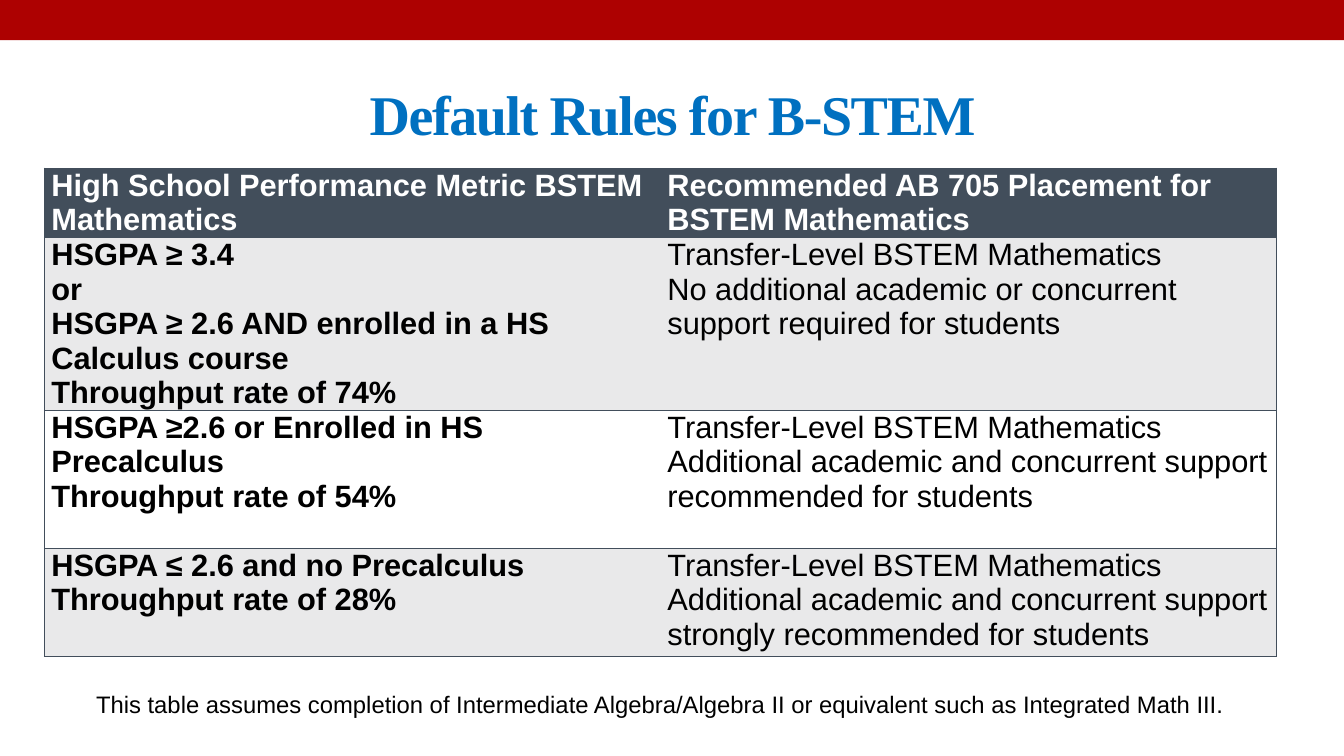
from dataclasses import dataclass

from lxml import etree
from pptx import Presentation
from pptx.dml.color import RGBColor
from pptx.enum.shapes import MSO_SHAPE
from pptx.enum.text import MSO_ANCHOR, PP_ALIGN
from pptx.oxml.ns import qn
from pptx.util import Inches, Pt

RECT = MSO_SHAPE.RECTANGLE
MIDDLE, TOP = MSO_ANCHOR.MIDDLE, MSO_ANCHOR.TOP
CENTER, LEFT = PP_ALIGN.CENTER, PP_ALIGN.LEFT

RED = RGBColor(0xAD, 0x01, 0x01)
BLUE = RGBColor(0x00, 0x70, 0xC0)
SLATE = RGBColor(0x42, 0x4E, 0x5B)
BAND = RGBColor(0xE9, 0xE9, 0xEA)
WHITE = RGBColor(0xFF, 0xFF, 0xFF)
BLACK = RGBColor(0, 0, 0)

SLIDE_W, SLIDE_H = 13.33, 7.5
TABLE_LEFT, TABLE_TOP, COL_W = 0.44, 1.67, 6.11
TABLE_W = 2 * COL_W


@dataclass(frozen=True)
class Rule:
    """One table row: metric on the left, placement on the right."""
    height: float
    metric: tuple[str, ...]
    placement: tuple[str, ...]


RULES = [
    Rule(0.69, ("High School Performance Metric BSTEM Mathematics",),
         ("Recommended AB 705 Placement for BSTEM Mathematics",)),
    Rule(1.71, ("HSGPA ≥ 3.4", "or",
                "HSGPA ≥ 2.6 AND enrolled in a HS Calculus course",
                "Throughput rate of 74%"),
         ("Transfer-Level BSTEM Mathematics",
          "No additional academic or concurrent support required for students")),
    Rule(1.37, ("HSGPA ≥2.6 or Enrolled in HS Precalculus", "Throughput rate of 54%"),
         ("Transfer-Level BSTEM Mathematics",
          "Additional academic and concurrent support recommended for students")),
    Rule(1.07, ("HSGPA ≤ 2.6 and no Precalculus", "Throughput rate of 28%"),
         ("Transfer-Level BSTEM Mathematics",
          "Additional academic and concurrent support strongly recommended "
          "for students")),
]


def write(tf, *lines: str, size: float, color: RGBColor, font: str = "Arial",
          bold: bool = False, align=LEFT, anchor=TOP, spacing: float = 0) -> None:
    """Fill a text frame with one paragraph per line."""
    tf.word_wrap = True
    tf.vertical_anchor = anchor
    for i, line in enumerate(lines):
        p = tf.paragraphs[0] if i == 0 else tf.add_paragraph()
        p.alignment = align
        r = p.add_run()
        r.text = line
        r.font.name, r.font.size, r.font.bold = font, Pt(size), bold
        r.font.color.rgb = color
        if spacing:
            r._r.get_or_add_rPr().set("spc", str(round(spacing * 100)))


def set_borders(cell, sides: str) -> None:
    """Draw 1 pt lines on the given sides (L, R, T, B) and clear the others."""
    tc_pr = cell._tc.get_or_add_tcPr()
    for side in "LRTB":
        ln = etree.SubElement(tc_pr, qn(f"a:ln{side}"), w=str(Pt(1)))
        if side in sides:
            fill = etree.SubElement(ln, qn("a:solidFill"))
            etree.SubElement(fill, qn("a:srgbClr"), val=str(SLATE))
        else:
            etree.SubElement(ln, qn("a:noFill"))


def add_rules_table(s, rules: list[Rule]) -> None:
    height = sum(rule.height for rule in rules)
    table = s.shapes.add_table(len(rules), 2, Inches(TABLE_LEFT), Inches(TABLE_TOP),
                               Inches(TABLE_W), Inches(height)).table
    table.horz_banding = False
    for column in table.columns:
        column.width = Inches(COL_W)
    for i, rule in enumerate(rules):
        table.rows[i].height = Inches(rule.height)
        header = i == 0
        for j, lines in enumerate((rule.metric, rule.placement)):
            cell = table.cell(i, j)
            cell.margin_left = cell.margin_right = Inches(0.07)
            cell.margin_top = cell.margin_bottom = 0
            set_borders(cell, "LTB" if j == 0 else "RTB")
            cell.fill.solid()
            cell.fill.fore_color.rgb = SLATE if header else BAND if i % 2 else WHITE
            write(cell.text_frame, *lines, size=22, bold=header or j == 0,
                  color=WHITE if header else BLACK)


def main() -> None:
    prs = Presentation()
    prs.slide_width, prs.slide_height = Inches(SLIDE_W), Inches(SLIDE_H)
    s = prs.slides.add_slide(prs.slide_layouts[5])

    # Top band
    band = s.shapes.add_shape(RECT, 0, 0, prs.slide_width, Inches(0.4))
    band.shadow.inherit = False
    band.fill.solid()
    band.fill.fore_color.rgb = RED
    band.line.fill.background()

    # Title
    title = s.shapes.title
    title.left, title.top = Inches(0.67), Inches(0.58)
    title.width, title.height = Inches(12), Inches(1.08)
    write(title.text_frame, "Default Rules for B-STEM", size=40, color=BLUE,
          font="Times New Roman", bold=True, align=CENTER, anchor=MIDDLE, spacing=-1)

    # Placement rules
    add_rules_table(s, RULES)

    # Footnote
    note = s.shapes.add_textbox(Inches(TABLE_LEFT), Inches(6.79),
                                Inches(TABLE_W), Inches(0.39))
    write(note.text_frame,
          "This table assumes completion of Intermediate Algebra/Algebra II "
          "or equivalent such as Integrated Math III.",
          size=17, color=BLACK, align=CENTER)

    prs.save("out.pptx")


if __name__ == "__main__":
    main()
